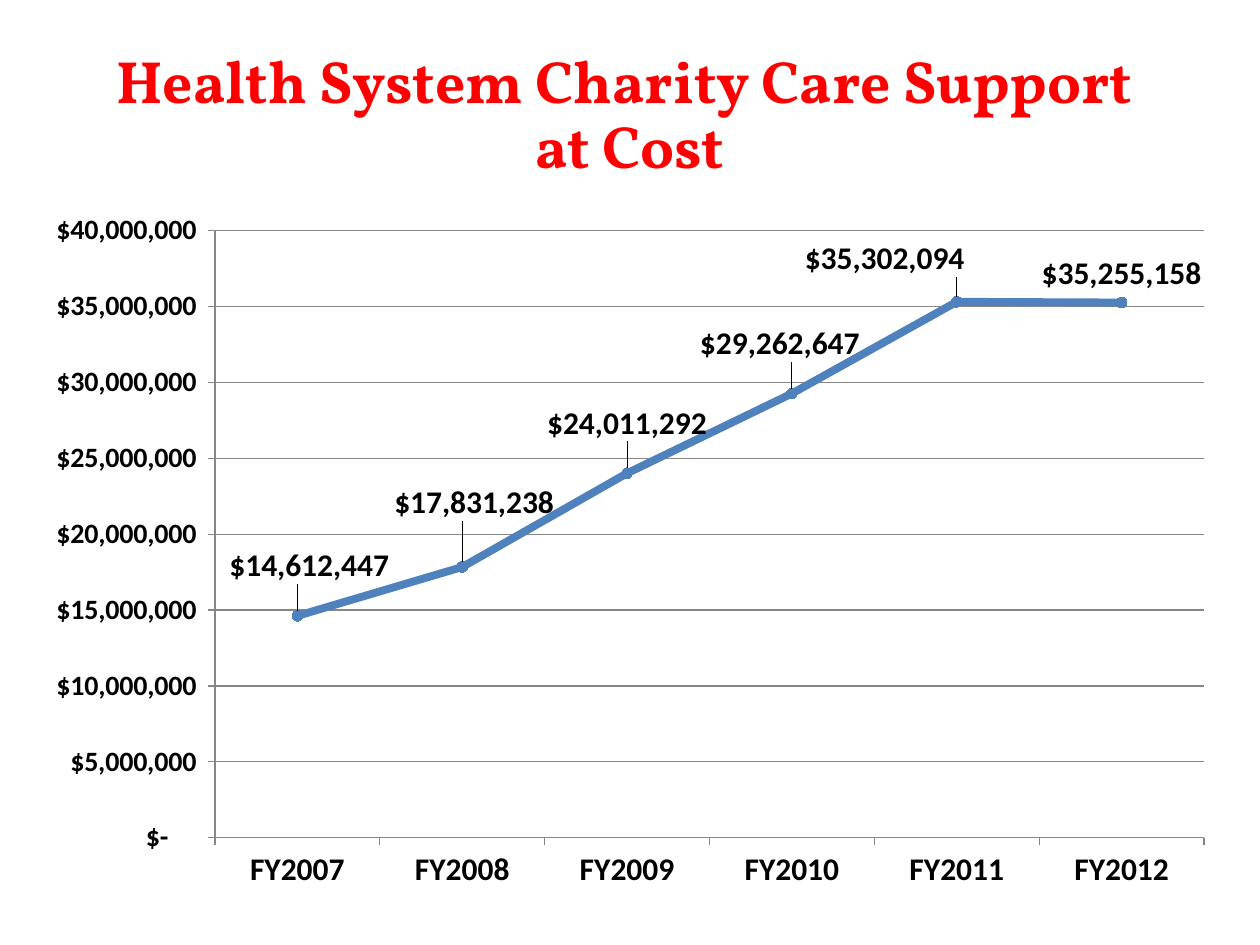
from dataclasses import dataclass

from lxml import etree
from pptx import Presentation
from pptx.chart.data import CategoryChartData
from pptx.dml.color import RGBColor
from pptx.enum.chart import (XL_CHART_TYPE, XL_LABEL_POSITION, XL_MARKER_STYLE,
                             XL_TICK_MARK)
from pptx.enum.text import MSO_ANCHOR, PP_ALIGN
from pptx.oxml.ns import qn
from pptx.util import Cm, Pt

LINE_MARKERS = XL_CHART_TYPE.LINE_MARKERS
ABOVE = XL_LABEL_POSITION.ABOVE
CIRCLE = XL_MARKER_STYLE.CIRCLE
TICK_OUT, TICK_NONE = XL_TICK_MARK.OUTSIDE, XL_TICK_MARK.NONE
CENTER, MIDDLE = PP_ALIGN.CENTER, MSO_ANCHOR.MIDDLE

RED = RGBColor(0xFF, 0x00, 0x00)
BLACK = RGBColor(0x00, 0x00, 0x00)
BLUE = RGBColor(0x4F, 0x81, 0xBD)
GRAY = RGBColor(0x86, 0x86, 0x86)

TITLE_FONT, CHART_FONT = "Vollkorn", "Calibri"
TITLE_LINES = ["Health System Charity Care Support ", "at Cost"]
DOLLARS = r'_("$"* #,##0_);_("$"* \(#,##0\);_("$"* "-"??_);_(@_)'


@dataclass
class YearCost:
    year: str
    cost: int
    shift: tuple[float, float] | None = None  # label offset, share of chart size


COSTS = [
    YearCost("FY2007", 14612447, (0.01, -0.03)),
    YearCost("FY2008", 17831238, (0.01, -0.05)),
    YearCost("FY2009", 24011292, (0, -0.03)),
    YearCost("FY2010", 29262647, (-0.01, -0.03)),
    YearCost("FY2011", 35302094, (-0.06, -0.02)),
    YearCost("FY2012", 35255158),
]


def style_font(font, size: float, color: RGBColor = BLACK, name: str = CHART_FONT) -> None:
    font.name, font.size, font.bold = name, Pt(size), True
    font.color.rgb = color


def manual_layout(**settings) -> etree._Element:
    layout = etree.Element(qn("c:layout"))
    manual = etree.SubElement(layout, qn("c:manualLayout"))
    for tag, value in settings.items():
        etree.SubElement(manual, qn(f"c:{tag}")).set("val", str(value))
    return layout


def place_plot_area(chart) -> None:
    plot_area = chart._chartSpace.find(f".//{qn('c:plotArea')}")
    for old in plot_area.findall(qn("c:layout")):
        plot_area.remove(old)
    plot_area.insert(0, manual_layout(layoutTarget="inner", xMode="edge", yMode="edge",
                                      x=0.157, y=0.045, w=0.823, h=0.864))


def style_axis(axis, size: float) -> None:
    axis.major_tick_mark, axis.minor_tick_mark = TICK_OUT, TICK_NONE
    axis.format.line.color.rgb = GRAY
    style_font(axis.tick_labels.font, size)


def label_points(series) -> None:
    labels = series.data_labels
    labels.show_value = True
    labels.position = ABOVE
    labels.number_format, labels.number_format_is_linked = DOLLARS, False
    style_font(labels.font, 18)
    for index, item in enumerate(COSTS):
        if item.shift is None:
            continue
        label = series.points[index].data_label
        style_font(label.font, 18)
        label.position = ABOVE
        element = series._element.xpath(f"c:dLbls/c:dLbl[c:idx/@val='{index}']")[0]
        x, y = item.shift
        element.insert(1, manual_layout(x=x, y=y))
        number_format = etree.Element(qn("c:numFmt"), formatCode=DOLLARS, sourceLinked="0")
        element.insert(2, number_format)


def add_cost_chart(page) -> None:
    data = CategoryChartData(number_format=DOLLARS)
    data.categories = [item.year for item in COSTS]
    data.add_series("Series 1", [item.cost for item in COSTS])
    chart = page.shapes.add_chart(LINE_MARKERS, Cm(0.53), Cm(4.01),
                                  Cm(24.23), Cm(14.17), data).chart
    chart.has_legend = chart.has_title = False
    chart.font.name, chart.font.size = CHART_FONT, Pt(10)
    chart.plots[0].vary_by_categories = False
    place_plot_area(chart)

    style_axis(chart.category_axis, 18)
    values = chart.value_axis
    style_axis(values, 16)
    values.minimum_scale, values.maximum_scale, values.major_unit = 0, 40000000, 5000000
    values.major_gridlines.format.line.color.rgb = GRAY
    values.tick_labels.number_format = DOLLARS
    values.tick_labels.number_format_is_linked = False

    series = chart.plots[0].series[0]
    series.smooth = False
    series.format.line.color.rgb = BLUE
    series.format.line.width = Pt(4.5)
    marker = series.marker
    marker.style, marker.size = CIRCLE, 6
    marker.format.fill.solid()
    marker.format.fill.fore_color.rgb = BLUE
    marker.format.line.color.rgb = BLUE
    label_points(series)


def add_title(page) -> None:
    box = page.shapes.add_textbox(Cm(1.27), Cm(0.76), Cm(22.86), Cm(3.18))
    frame = box.text_frame
    frame.word_wrap = True
    frame.vertical_anchor = MIDDLE
    frame.text = "\n".join(TITLE_LINES)
    for para in frame.paragraphs:
        para.alignment = CENTER
        para.line_spacing = 0.9
        for span in para.runs:
            style_font(span.font, 34.1, RED, TITLE_FONT)


def main() -> None:
    deck = Presentation()
    deck.slide_width, deck.slide_height = Cm(25.4), Cm(19.05)
    page = deck.slides.add_slide(deck.slide_layouts[6])
    add_cost_chart(page)
    add_title(page)
    deck.save("out.pptx")


if __name__ == "__main__":
    main()
